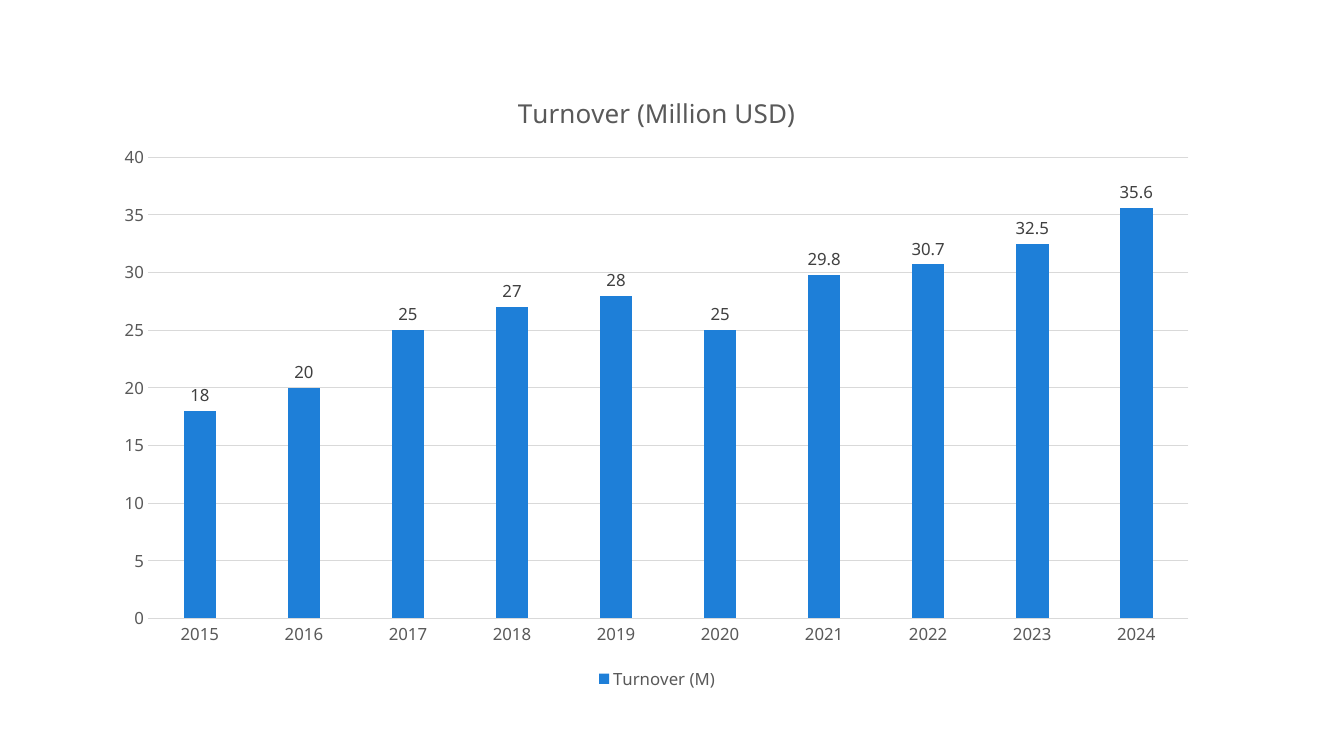
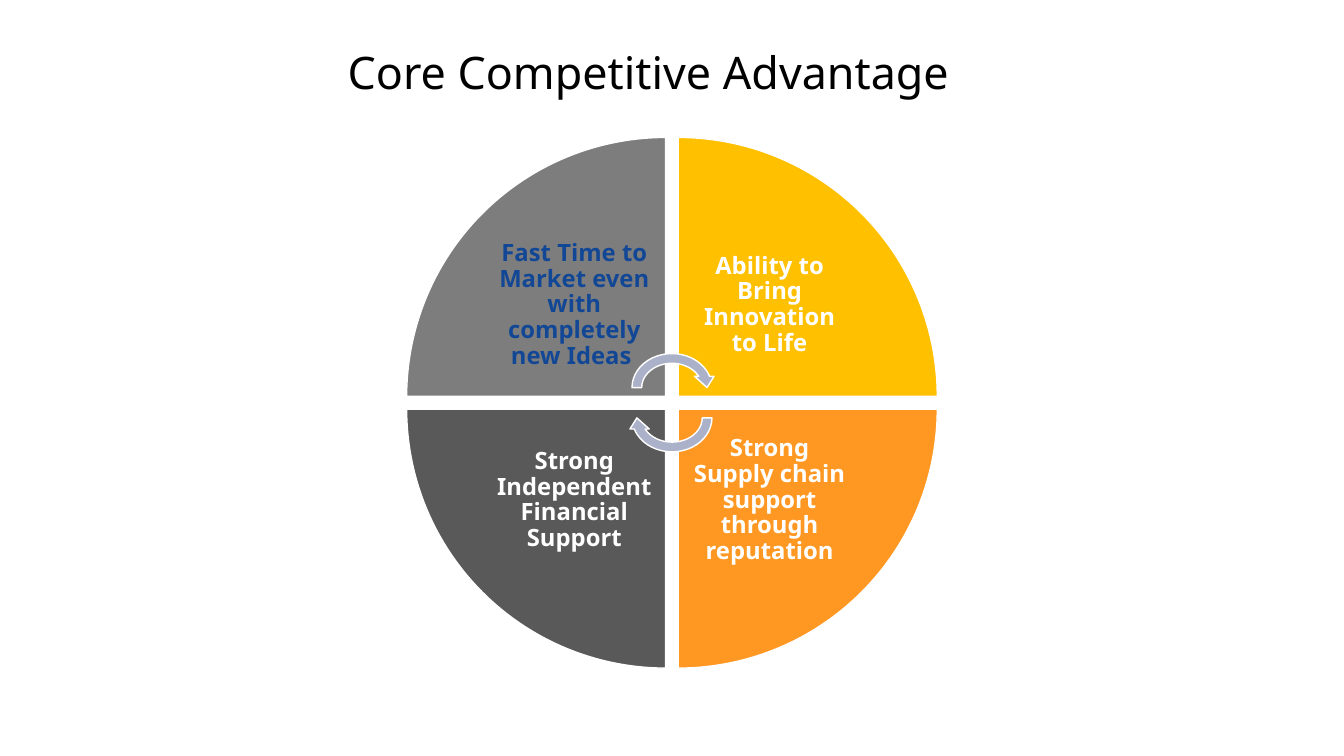
import lxml.etree
import pptx
import pptx.chart.data
import pptx.dml.color
import pptx.enum.chart
import pptx.enum.shapes
import pptx.enum.text
import pptx.oxml.ns
import pptx.util

Pt = pptx.util.Pt
RGB = pptx.dml.color.RGBColor
Shape = pptx.enum.shapes.MSO_SHAPE
Align = pptx.enum.text.PP_ALIGN
qn = pptx.oxml.ns.qn

FONT = "Noto Sans"
BLACK = RGB(0x00, 0x00, 0x00)
WHITE = RGB(0xFF, 0xFF, 0xFF)
BLUE = RGB(0x1E, 0x7F, 0xD8)
NAVY = RGB(0x12, 0x47, 0x96)
GREY = RGB(0x7D, 0x7D, 0x7D)
DARK = RGB(0x59, 0x59, 0x59)
LABEL = RGB(0x40, 0x40, 0x40)
GRID = RGB(0xD9, 0xD9, 0xD9)
GOLD = RGB(0xFF, 0xC0, 0x00)
ORANGE = RGB(0xFF, 0x98, 0x22)
LILAC = RGB(0xAB, 0xB1, 0xC9)

YEARS = [str(year) for year in range(2015, 2025)]
SALES = [18, 20, 25, 27, 28, 25, 29.8, 30.7, 32.5, 35.6]

# Wheel: centre, wedge size, half the gap, text box size
MID_X, MID_Y = 480, 287.7
WEDGE, HALF, TEXT = 185, 4.5, 130.5

# Side of the centre (x, y), fill, text colour, text; clockwise
PARTS = [
    (-1, -1, GREY, NAVY, "Fast Time to Market even with completely new Ideas "),
    (1, -1, GOLD, WHITE, "Ability to Bring Innovation to Life"),
    (1, 1, ORANGE, WHITE, "Strong Supply chain support through reputation"),
    (-1, 1, DARK, WHITE, "Strong Independent Financial Support"),
]


def style(font, size, color, bold=False):
    font.name = FONT
    font.size = Pt(size)
    font.bold = bold
    font.color.rgb = color


def place(parent, **sizes):
    """Give a chart part a fixed place, in fractions of the chart."""
    layout = parent.find(qn("c:layout"))
    if layout is None:
        layout = lxml.etree.Element(qn("c:layout"))
        parent.insert(0, layout)
    manual = lxml.etree.SubElement(layout, qn("c:manualLayout"))
    if "w" in sizes:
        lxml.etree.SubElement(manual, qn("c:layoutTarget")).set("val", "inner")
    for key in "xy":
        lxml.etree.SubElement(manual, qn(f"c:{key}Mode")).set("val", "edge")
    for key, value in sizes.items():
        lxml.etree.SubElement(manual, qn(f"c:{key}")).set("val", str(value))


def add_text(slide, box, text, size, color, bold=False):
    frame = slide.shapes.add_textbox(*map(Pt, box)).text_frame
    frame.word_wrap = True
    para = frame.paragraphs[0]
    para.text = text
    style(para.font, size, color, bold)
    return frame


def add_part(slide, kind, box, turn, fill):
    shape = slide.shapes.add_shape(kind, *map(Pt, box))
    shape.rotation = turn
    shape.shadow.inherit = False
    shape.fill.solid()
    shape.fill.fore_color.rgb = fill
    shape.line.color.rgb = WHITE
    shape.line.width = Pt(1)


def corner(side, mid, size):
    """Near edge of a box that lies on one side of the wheel's centre."""
    return mid + HALF if side > 0 else mid - HALF - size


def set_axis(axis):
    none = pptx.enum.chart.XL_TICK_MARK.NONE
    axis.major_tick_mark = axis.minor_tick_mark = none
    style(axis.tick_labels.font, 12, DARK)


def set_line(line):
    line.color.rgb = GRID
    line.width = Pt(0.75)


def add_bars(slide):
    data = pptx.chart.data.CategoryChartData()
    data.categories = YEARS
    data.add_series("Turnover (M)", SALES)
    kind = pptx.enum.chart.XL_CHART_TYPE.COLUMN_CLUSTERED
    box = map(Pt, (74, 44.6, 790.6, 451.4))
    chart = slide.shapes.add_chart(kind, *box, data).chart
    style(chart.font, 10, BLACK)

    title = chart.chart_title
    para = title.text_frame.paragraphs[0]
    para.text = "Turnover (Million USD)"
    style(para.font, 18.6, DARK)
    place(title._element, x=0.37, y=0.04)
    area = chart._chartSpace.find(".//" + qn("c:plotArea"))
    place(area, x=0.04, y=0.15, w=0.94, h=0.73)

    chart.has_legend = True
    chart.legend.position = pptx.enum.chart.XL_LEGEND_POSITION.BOTTOM
    chart.legend.include_in_layout = False
    style(chart.legend.font, 12, DARK)

    cats, vals = chart.category_axis, chart.value_axis
    set_axis(cats)
    set_line(cats.format.line)
    set_axis(vals)
    vals.format.line.fill.background()
    vals.minimum_scale, vals.maximum_scale, vals.major_unit = 0, 40, 5
    set_line(vals.major_gridlines.format.line)

    plot = chart.plots[0]
    plot.gap_width, plot.overlap = 219, -27
    plot.vary_by_categories = False
    bars = plot.series[0]
    bars.format.fill.solid()
    bars.format.fill.fore_color.rgb = BLUE
    labels = bars.data_labels
    labels.show_value = True
    labels.position = pptx.enum.chart.XL_LABEL_POSITION.OUTSIDE_END
    style(labels.font, 12, LABEL)


def add_wheel(slide):
    for step, (across, down, fill, color, text) in enumerate(PARTS):
        box, inner = (
            (corner(across, MID_X, size), corner(down, MID_Y, size), size, size)
            for size in (WEDGE, TEXT)
        )
        add_part(slide, Shape.PIE_WEDGE, box, 90 * step, fill)
        frame = add_text(slide, inner, text, 17, color, True)
        frame.margin_left = frame.margin_right = Pt(9.4)
        frame.margin_top = frame.margin_bottom = Pt(9.4)
        frame.vertical_anchor = pptx.enum.text.MSO_ANCHOR.MIDDLE
        frame.paragraphs[0].alignment = Align.CENTER
        frame.paragraphs[0].line_spacing = 0.9

    wide, high = 64, 55.5
    for top, turn in ((249.1, 0), (270.7, 180)):
        box = (MID_X - wide / 2, top, wide, high)
        add_part(slide, Shape.CIRCULAR_ARROW, box, turn, LILAC)


def main():
    deck = pptx.Presentation()
    deck.slide_width, deck.slide_height = Pt(960), Pt(540)
    blank = deck.slide_layouts[6]
    add_bars(deck.slides.add_slide(blank))

    slide = deck.slides.add_slide(blank)
    box = (241.2, 28.1, 474.5, 46)
    frame = add_text(slide, box, "Core Competitive Advantage", 32, BLACK)
    frame.auto_size = pptx.enum.text.MSO_AUTO_SIZE.SHAPE_TO_FIT_TEXT
    add_wheel(slide)
    deck.save("out.pptx")


if __name__ == "__main__":
    main()
